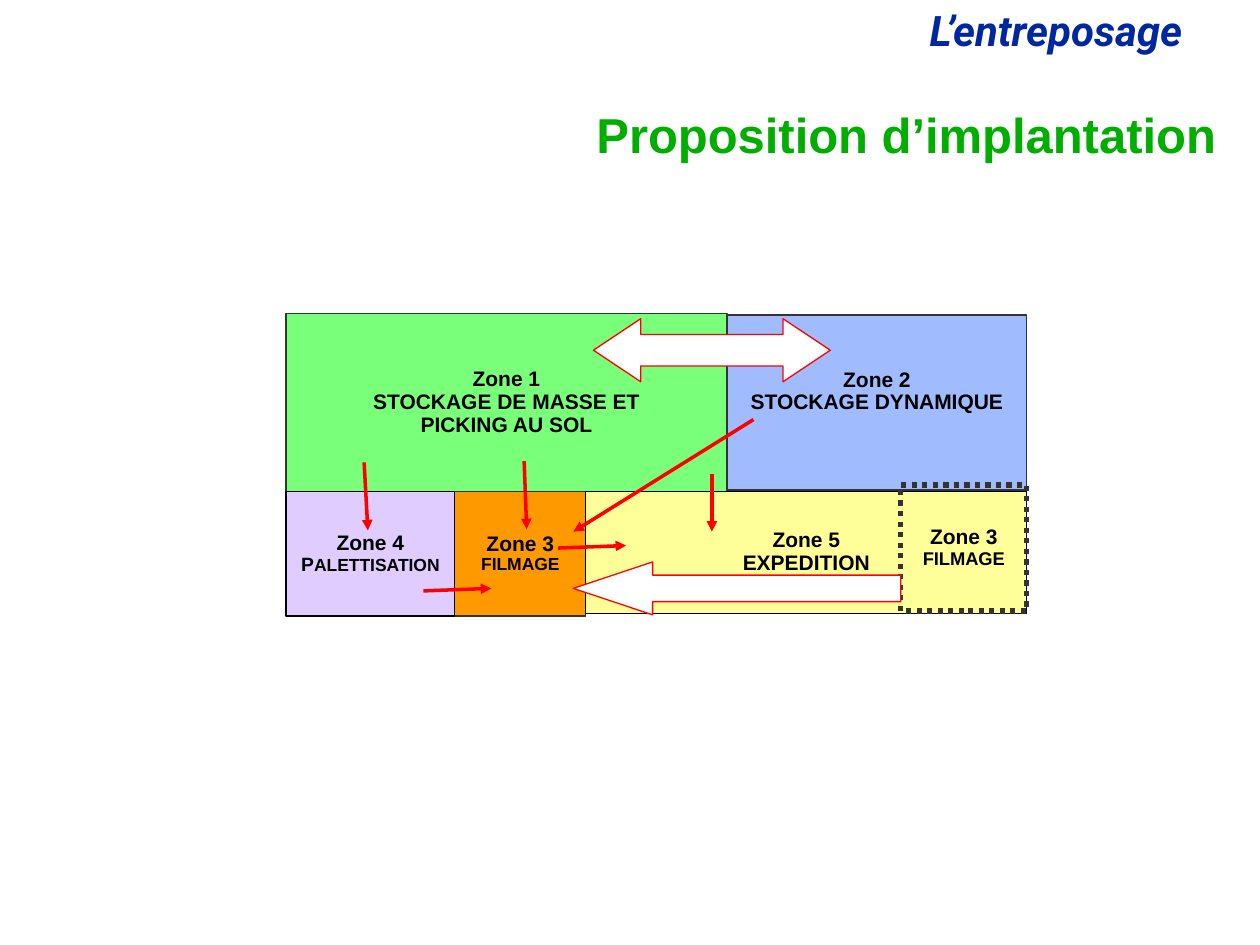
import dataclasses

import pptx
import pptx.dml.color
import pptx.enum.dml
import pptx.enum.shapes
import pptx.enum.text
import pptx.oxml
import pptx.oxml.ns
import pptx.util

Inches = pptx.util.Inches
Pt = pptx.util.Pt
Align = pptx.enum.text.PP_ALIGN
Anchor = pptx.enum.text.MSO_ANCHOR
Shape = pptx.enum.shapes.MSO_SHAPE


@dataclasses.dataclass(frozen=True)
class Theme:
    font: str = "Arial"
    header_font: str = "Roboto"
    header_size: float = 24
    title_size: float = 28
    zone_size: float = 12
    initial_size: float = 11
    dotted_size: float = 10.5
    small_size: float = 10
    thin: float = 0.75
    flow_width: float = 2
    dotted_width: float = 3
    header: str = "00279F"
    title: str = "00AE00"
    black: str = "000000"
    gray: str = "333333"
    white: str = "FFFFFF"
    red: str = "FF0000"
    green: str = "79FF79"
    blue: str = "A0BCFE"
    purple: str = "E0CCFF"
    orange: str = "FF9900"
    yellow: str = "FFFF99"


THEME = Theme()


def rgb(color):
    return pptx.dml.color.RGBColor.from_string(color)


def write_lines(text_frame, lines, color, font=THEME.font, align=Align.CENTER, italic=False):
    """Write one paragraph per line; a line is a list of (text, size) runs."""
    text_frame.word_wrap = True
    for index, line in enumerate(lines):
        paragraph = text_frame.paragraphs[0] if index == 0 else text_frame.add_paragraph()
        paragraph.alignment = align
        paragraph.line_spacing = 0.9
        for text, size in line:
            run = paragraph.add_run()
            run.text = text
            run.font.name = font
            run.font.size = Pt(size)
            run.font.bold = True
            run.font.italic = italic
            run.font.color.rgb = rgb(color)


def add_text(slide, box, text, size, color, **style):
    text_box = slide.shapes.add_textbox(*map(Inches, box))
    write_lines(text_box.text_frame, [[(text, size)]], color, **style)
    return text_box


def add_outlined(slide, kind, box, fill, line, width=THEME.thin):
    shape = slide.shapes.add_shape(kind, *map(Inches, box))
    shape.shadow.inherit = False
    if fill:
        shape.fill.solid()
        shape.fill.fore_color.rgb = rgb(fill)
    else:
        shape.fill.background()
    shape.line.color.rgb = rgb(line)
    shape.line.width = Pt(width)
    return shape


def add_zone(slide, box, fill, line, lines, width=THEME.thin):
    zone = add_outlined(slide, Shape.RECTANGLE, box, fill, line, width)
    frame = zone.text_frame
    frame.vertical_anchor = Anchor.MIDDLE
    frame.margin_left = frame.margin_right = Inches(0.05)
    write_lines(frame, lines, THEME.black)
    return zone


def add_block_arrow(slide, kind, box, head_length):
    arrow = add_outlined(slide, kind, box, THEME.white, THEME.red)
    arrow.adjustments[0] = 0.5
    arrow.adjustments[1] = head_length


def add_flow(slide, start, end):
    connector = slide.shapes.add_connector(
        pptx.enum.shapes.MSO_CONNECTOR.STRAIGHT, *map(Inches, start + end))
    connector.line.color.rgb = rgb(THEME.red)
    connector.line.width = Pt(THEME.flow_width)
    head = pptx.oxml.parse_xml(
        f'<a:tailEnd {pptx.oxml.ns.nsdecls("a")} type="triangle"/>')
    connector.line._get_or_add_ln().append(head)
    effects = pptx.oxml.parse_xml(f'<a:effectLst {pptx.oxml.ns.nsdecls("a")}/>')
    connector._element.spPr.append(effects)


def add_zones(slide):
    size, small = THEME.zone_size, THEME.small_size
    left, middle, right = 2.27, 5.77, 8.15
    top, lower = 2.49, 3.9
    wrap_left, shipping_left = 3.61, 4.65
    depth = 0.99

    add_zone(slide, (wrap_left, lower, shipping_left - wrap_left, depth),
             THEME.orange, THEME.gray, [[("Zone 3", size)], [("FILMAGE", small)]])
    add_zone(slide, (left, top, middle - left, lower - top), THEME.green, THEME.gray,
             [[("Zone 1", size)], [("STOCKAGE DE MASSE ET", size)],
              [("PICKING AU SOL", size)]])
    add_zone(slide, (left, lower, wrap_left - left, depth), THEME.purple, THEME.black,
             [[("Zone 4", size)],
              [("P", THEME.initial_size), ("ALETTISATION", small)]])
    add_zone(slide, (shipping_left, lower, right - shipping_left, 0.97),
             THEME.yellow, THEME.black, [[("Zone 5", size)], [("EXPEDITION", size)]])
    dynamic = add_zone(slide, (middle, 2.5, right - middle, 1.39), THEME.blue, THEME.gray,
                       [[("Zone 2", size)], [("STOCKAGE DYNAMIQUE", size)]])
    dynamic.text_frame.margin_bottom = Inches(0.22)


def add_second_wrapping_zone(slide):
    zone = add_zone(slide, (7.15, 3.85, 1, 1), None, THEME.gray,
                    [[("Zone 3", THEME.zone_size)], [("FILMAGE", THEME.dotted_size)]],
                    THEME.dotted_width)
    zone.line.dash_style = pptx.enum.dml.MSO_LINE.ROUND_DOT


def main():
    presentation = pptx.Presentation()
    presentation.slide_width = Inches(10)
    presentation.slide_height = Inches(7.5)
    slide = presentation.slides.add_slide(presentation.slide_layouts[6])

    add_text(slide, (7.28, 0.03, 4.75, 0.46), "L’entreposage", THEME.header_size,
             THEME.header, font=THEME.header_font, align=Align.LEFT, italic=True)
    title = add_text(slide, (1.17, 0.84, 8.58, 0.5), "Proposition d’implantation",
                     THEME.title_size, THEME.title, align=Align.RIGHT)
    title.text_frame.vertical_anchor = Anchor.MIDDLE

    add_zones(slide)
    add_block_arrow(slide, Shape.LEFT_RIGHT_ARROW, (4.71, 2.53, 1.88, 0.5), 0.75)
    add_second_wrapping_zone(slide)
    add_block_arrow(slide, Shape.LEFT_ARROW, (4.55, 4.46, 2.6, 0.42), 1.5)

    flows = [
        ((5.98, 3.33), (4.55, 4.22)),
        ((4.16, 3.66), (4.18, 4.2)),
        ((4.43, 4.35), (4.97, 4.33)),
        ((5.65, 3.76), (5.65, 4.22)),
        ((2.89, 3.67), (2.92, 4.21)),
        ((3.36, 4.69), (3.9, 4.67)),
    ]
    for start, end in flows:
        add_flow(slide, start, end)

    presentation.save("out.pptx")


if __name__ == "__main__":
    main()
